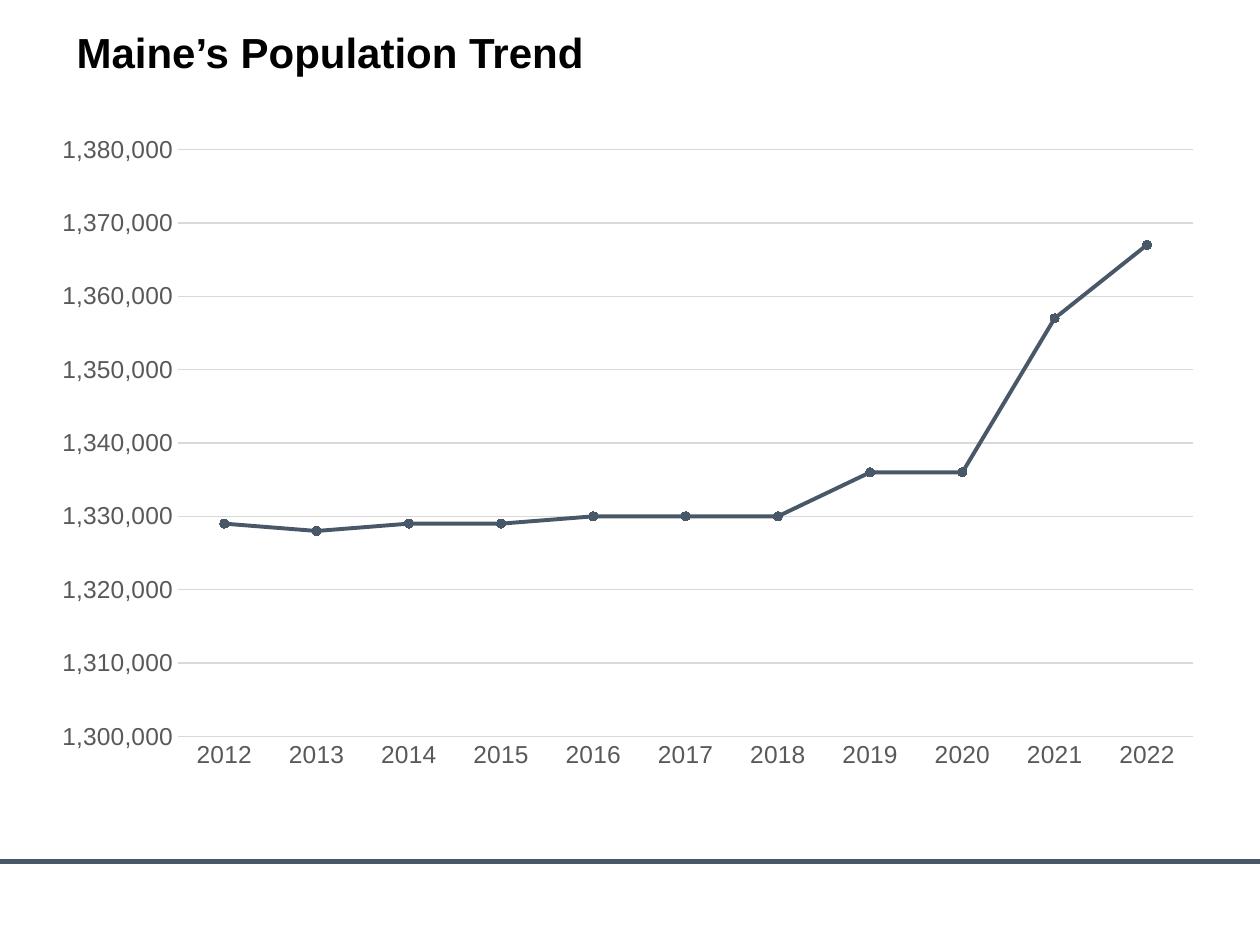
import dataclasses

import pptx
import pptx.chart.data
import pptx.dml.color
import pptx.enum.chart
import pptx.enum.shapes
import pptx.enum.text
import pptx.oxml
import pptx.oxml.ns
import pptx.util

Cm = pptx.util.Cm
Pt = pptx.util.Pt
FONT = "Arial"
COLORS = {"slate": "495869", "label": "595959", "grid": "D9D9D9", "title": "000000"}


@dataclasses.dataclass
class Count:
    year: int
    people: int


COUNTS = [
    Count(2012, 1329000),
    Count(2013, 1328000),
    Count(2014, 1329000),
    Count(2015, 1329000),
    Count(2016, 1330000),
    Count(2017, 1330000),
    Count(2018, 1330000),
    Count(2019, 1336000),
    Count(2020, 1336000),
    Count(2021, 1357000),
    Count(2022, 1367000),
]
PLOT = {"x": 0.118, "y": 0.0418, "w": 0.8615, "h": 0.889}


def color(name: str) -> pptx.dml.color.RGBColor:
    return pptx.dml.color.RGBColor.from_string(COLORS[name])


def style_line(line, name: str, width: float) -> None:
    line.color.rgb = color(name)
    line.width = Pt(width)


def style_font(font, name: str, size: float) -> None:
    font.name = FONT
    font.size = Pt(size)
    font.color.rgb = color(name)


def style_axis(axis) -> None:
    axis.major_tick_mark = pptx.enum.chart.XL_TICK_MARK.NONE
    axis.minor_tick_mark = pptx.enum.chart.XL_TICK_MARK.NONE
    style_font(axis.tick_labels.font, "label", 14)


def place_plot(chart) -> None:
    """Fix the inner plot area as fractions of the chart."""
    area = chart.element.find(".//" + pptx.oxml.ns.qn("c:plotArea"))
    for old in area.findall(pptx.oxml.ns.qn("c:layout")):
        area.remove(old)
    modes = "".join(f'<c:{key}Mode val="edge"/>' for key in "xy")
    sizes = "".join(f'<c:{key} val="{size}"/>' for key, size in PLOT.items())
    area.insert(0, pptx.oxml.parse_xml(
        f'<c:layout {pptx.oxml.ns.nsdecls("c")}><c:manualLayout>'
        f'<c:layoutTarget val="inner"/>{modes}{sizes}'
        "</c:manualLayout></c:layout>"))


def add_rule(slide, top: int, width: int) -> None:
    rule = slide.shapes.add_connector(
        pptx.enum.shapes.MSO_CONNECTOR.STRAIGHT, 0, top, width, top)
    style_line(rule.line, "slate", 3)
    rule.element.spPr.append(pptx.oxml.parse_xml(
        f'<a:effectLst {pptx.oxml.ns.nsdecls("a")}/>'))


def add_trend(slide, counts: list[Count]) -> None:
    data = pptx.chart.data.CategoryChartData(number_format="#,##0")
    data.categories = [str(count.year) for count in counts]
    data.add_series("Series 1", [count.people for count in counts])
    chart = slide.shapes.add_chart(
        pptx.enum.chart.XL_CHART_TYPE.LINE_MARKERS,
        Cm(0.79), Cm(2.46), Cm(23.75), Cm(13.31), data).chart
    chart.has_title = False
    chart.has_legend = False
    style_font(chart.font, "title", 10)

    # Axes
    years, people = chart.category_axis, chart.value_axis
    style_axis(years)
    style_axis(people)
    style_line(years.format.line, "grid", 0.75)
    people.format.line.fill.background()
    people.minimum_scale = 1300000
    people.maximum_scale = 1380000
    people.major_unit = 10000
    people.has_major_gridlines = True
    style_line(people.major_gridlines.format.line, "grid", 0.75)
    people.tick_labels.number_format = "#,##0"
    people.tick_labels.number_format_is_linked = False

    # Line and markers
    plot = chart.plots[0]
    plot.vary_by_categories = False
    trend = plot.series[0]
    trend.smooth = False
    style_line(trend.format.line, "slate", 2.25)
    mark = trend.marker
    mark.style = pptx.enum.chart.XL_MARKER_STYLE.CIRCLE
    mark.size = 5
    mark.format.fill.solid()
    mark.format.fill.fore_color.rgb = color("slate")
    style_line(mark.format.line, "slate", 0.75)
    place_plot(chart)


def set_title(slide, text: str) -> None:
    title = slide.shapes.title
    title.left, title.top = Cm(1.29), Cm(0.4)
    title.width, title.height = Cm(10.82), Cm(1.27)
    frame = title.text_frame
    frame.text = text
    frame.word_wrap = False
    frame.auto_size = pptx.enum.text.MSO_AUTO_SIZE.SHAPE_TO_FIT_TEXT
    frame.vertical_anchor = pptx.enum.text.MSO_ANCHOR.TOP
    para = frame.paragraphs[0]
    para.alignment = pptx.enum.text.PP_ALIGN.LEFT
    font = para.runs[0].font
    style_font(font, "title", 24)
    font.bold = True


def main() -> None:
    deck = pptx.Presentation()
    deck.slide_width, deck.slide_height = Cm(25.4), Cm(19.05)
    slide = deck.slides.add_slide(deck.slide_layouts[5])
    add_rule(slide, Cm(17.37), deck.slide_width)
    add_trend(slide, COUNTS)
    set_title(slide, "Maine’s Population Trend")
    deck.save("out.pptx")


if __name__ == "__main__":
    main()
